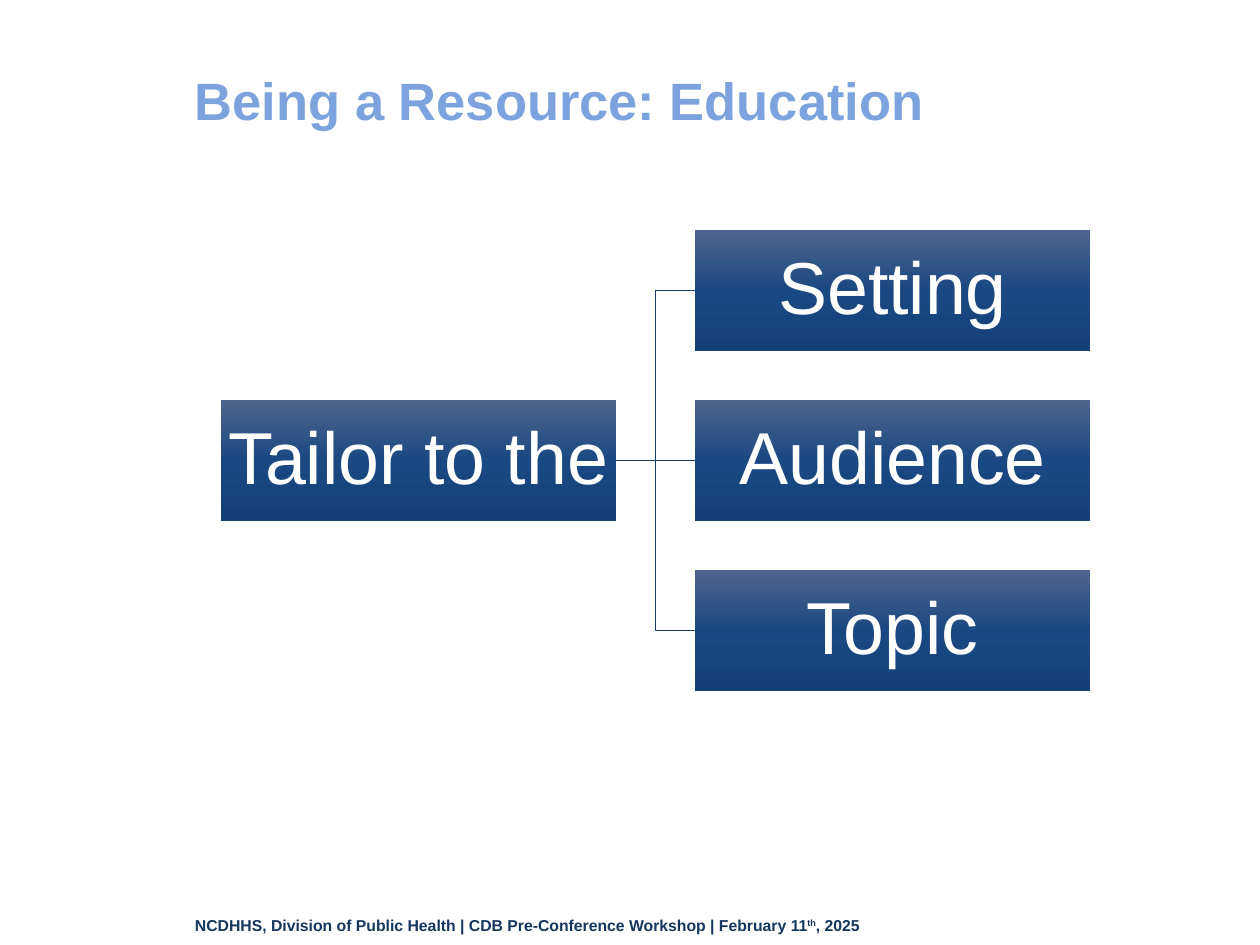
from copy import deepcopy

from lxml import etree
from pptx import Presentation
from pptx import util as u
from pptx.dml.color import RGBColor
from pptx.enum import shapes, text
from pptx.oxml.ns import qn

FONT = "Arial"
NAVY, LIGHT_BLUE, LINE, WHITE = "15365E", "7CA3DD", "193A64", "FFFFFF"
GRADIENT = [(0, "4F648D"), (0.5, "1A4882"), (1, "134077")]

# Box grid, in cm
BOX_W, BOX_H = 7.97, 2.44
LEFT_X, RIGHT_X = 4.45, 14.01
TOP, PITCH = 4.64, 3.43


def color(value):
    return RGBColor.from_string(value)


def add_run(p, content, size, fill, bold=False):
    r = p.add_run()
    r.text = content
    r.font.name = FONT
    r.font.size = u.Pt(size)
    r.font.bold = bold
    r.font.color.rgb = color(fill)
    return r


def add_textbox(s, x, y, w, h, anchor):
    tf = s.shapes.add_textbox(u.Cm(x), u.Cm(y), u.Cm(w), u.Cm(h)).text_frame
    tf.word_wrap = True
    tf.vertical_anchor = anchor
    return tf.paragraphs[0]


def fill_gradient(sp):
    sp.fill.gradient()
    stop_list = sp.fill._fill._gradFill.find(qn("a:gsLst"))
    stop_list.insert(1, deepcopy(stop_list[0]))
    for stop, (position, value) in zip(sp.fill.gradient_stops, GRADIENT):
        stop.position = position
        stop.color.rgb = color(value)
    sp.fill.gradient_angle = 270  # top to bottom


def add_box(s, label, x, row):
    sp = s.shapes.add_shape(shapes.MSO_SHAPE.RECTANGLE, u.Cm(x),
                            u.Cm(TOP + row * PITCH), u.Cm(BOX_W), u.Cm(BOX_H))
    sp.shadow.inherit = False
    sp.line.fill.background()
    fill_gradient(sp)
    tf = sp.text_frame
    tf.word_wrap = True
    tf.vertical_anchor = text.MSO_ANCHOR.MIDDLE
    tf.margin_left = tf.margin_right = u.Cm(0.07)
    tf.margin_top = tf.margin_bottom = u.Cm(0.07)
    p = tf.paragraphs[0]
    p.alignment = text.PP_ALIGN.CENTER
    p.line_spacing = 0.9
    add_run(p, label, 42, WHITE)
    return sp


def add_link(s, start, end):
    kind = shapes.MSO_CONNECTOR
    kind = kind.STRAIGHT if start.top == end.top else kind.ELBOW
    link = s.shapes.add_connector(kind, 0, 0, 0, 0)
    link.begin_connect(start, 3)
    link.end_connect(end, 1)
    link.line.color.rgb = color(LINE)
    link.line.width = u.Pt(0.5)
    etree.SubElement(link._element.spPr, qn("a:effectLst"))


def main():
    prs = Presentation()
    prs.slide_width, prs.slide_height = u.Cm(25.4), u.Cm(19.05)
    s = prs.slides.add_slide(prs.slide_layouts[6])

    # Title
    p = add_textbox(s, 3.68, 1.27, 20.93, 1.52, text.MSO_ANCHOR.BOTTOM)
    p.line_spacing = 0.9
    add_run(p, "Being a Resource: Education", 30, LIGHT_BLUE, bold=True)

    # Hierarchy: one root, three branches
    root = add_box(s, "Tailor to the", LEFT_X, 1)
    for row, label in enumerate(["Setting", "Audience", "Topic"]):
        add_link(s, root, add_box(s, label, RIGHT_X, row))

    # Footer
    p = add_textbox(s, 3.68, 18.34, 21.5, 0.71, text.MSO_ANCHOR.TOP)
    add_run(p, "NCDHHS, Division of Public Health | CDB Pre-Conference "
               "Workshop | February 11", 9, NAVY, bold=True)
    ordinal = add_run(p, "th", 9, NAVY, bold=True)
    ordinal.font._element.set("baseline", "30000")
    add_run(p, ", 2025", 9, NAVY, bold=True)

    prs.save("out.pptx")


if __name__ == "__main__":
    main()
